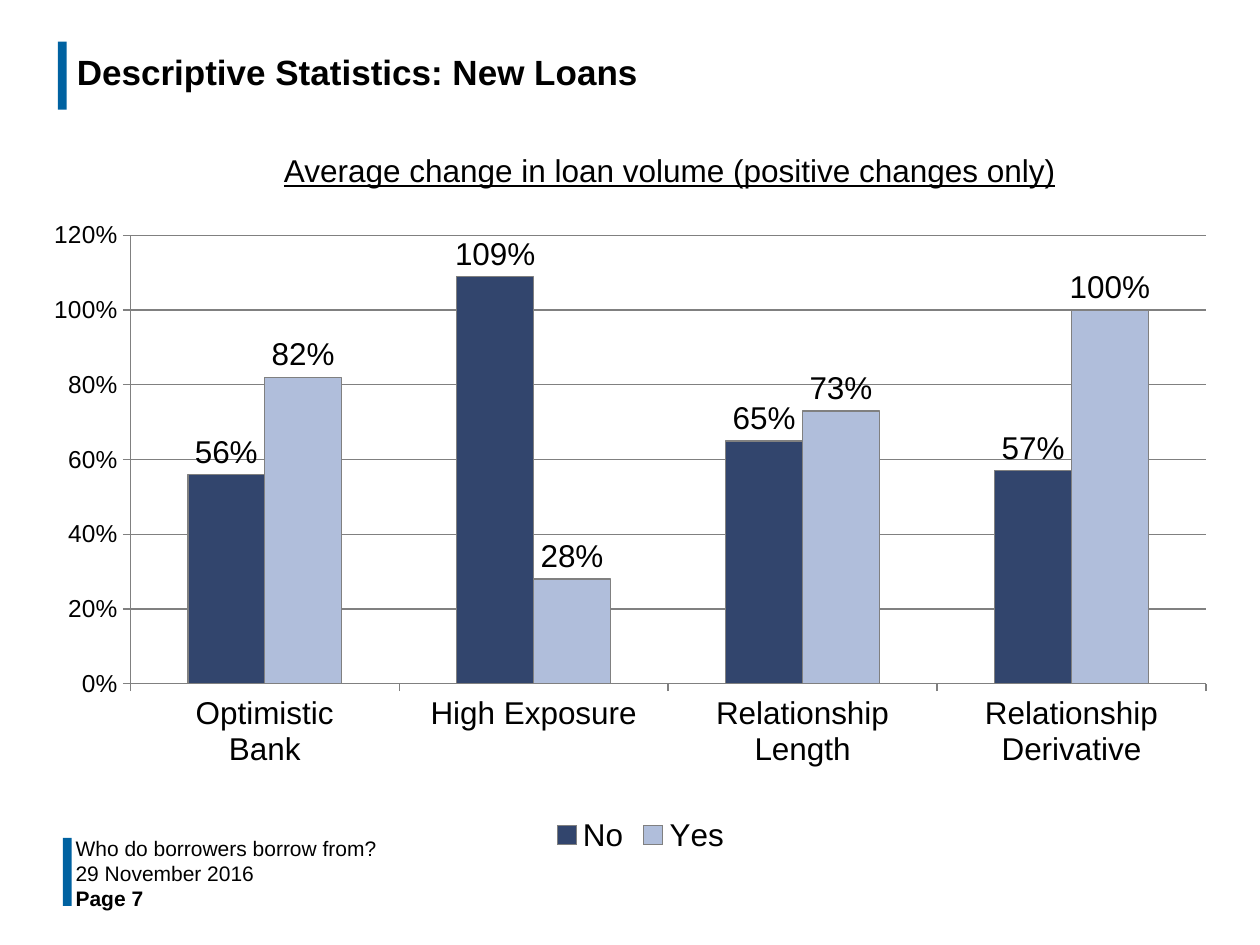
from lxml import etree
from pptx import Presentation
from pptx import util as u
from pptx.chart.data import CategoryChartData
from pptx.dml.color import RGBColor
from pptx.enum import chart as ch, shapes, text
from pptx.oxml import parse_xml
from pptx.oxml.ns import nsdecls, qn

THEME = {
    "font": "Arial", "ink": "000000", "bar": "0062A1", "line": "808080",
    "title": 20, "large": 18, "axis": 14, "small": 12,
}
TITLE = "Descriptive Statistics: New Loans"
HEAD = "Average change in loan volume (positive changes only)"
FOOT = [
    ("Who do borrowers borrow from?", 6.64, 8.88, False),
    ("29 November 2016", 6.84, 2.31, False),
    ("Page 7", 7.04, 2.31, True),
]
BARS = [(0.46, 0.33), (0.5, 6.65)]
CATS = ["Optimistic\nBank", "High Exposure", "Relationship\nLength", "Relationship\nDerivative"]
SERIES = [
    ("No", "32456D", (0.56, 1.09, 0.65, 0.57)),
    ("Yes", "B0BEDB", (0.82, 0.28, 0.73, 1)),
]
PLOT = {"x": 0.063, "y": 0.033, "w": 0.921, "h": 0.695}


def color(key):
    return RGBColor.from_string(THEME.get(key, key))


def box(*vals):
    return [u.Inches(v) for v in vals]


def style(font, size, bold=False):
    font.name = THEME["font"]
    font.size = u.Pt(THEME[size])
    font.bold = bold
    font.color.rgb = color("ink")


def stroke(line):
    line.color.rgb = color("line")
    line.width = u.Pt(0.75)


def write(slide, words, place, size, bold=False):
    frame = slide.shapes.add_textbox(*box(*place)).text_frame
    frame.word_wrap = True
    para = frame.paragraphs[0]
    para.text = words
    style(para.font, size, bold)
    return frame


def add_bars(slide):
    for left, top in BARS:
        bar = slide.shapes.add_shape(shapes.MSO_SHAPE.RECTANGLE, *box(left, top, 0.07, 0.54))
        bar.shadow.inherit = False
        bar.fill.solid()
        bar.fill.fore_color.rgb = color("bar")
        bar.line.fill.background()


def add_title(slide):
    title = slide.shapes.title
    title.left, title.top, title.width, title.height = box(0.51, 0.28, 9.29, 0.63)
    frame = title.text_frame
    frame.text = TITLE
    frame.vertical_anchor = text.MSO_ANCHOR.MIDDLE
    para = frame.paragraphs[0]
    para.alignment = text.PP_ALIGN.LEFT
    para.line_spacing = u.Pt(20.4)
    style(para.font, "title", True)


def add_foot(slide):
    for words, top, width, bold in FOOT:
        frame = write(slide, words, (0.51, top, width, 0.18), "small", bold)
        frame.vertical_anchor = text.MSO_ANCHOR.MIDDLE
        frame.margin_left = frame.margin_right = u.Inches(0.09)
        frame.margin_top = frame.margin_bottom = u.Inches(0.04)


def set_plot(chart):
    area = chart._chartSpace.chart.plotArea
    for old in area.findall(qn("c:layout")):
        area.remove(old)
    layout = parse_xml(f"<c:layout {nsdecls('c')}><c:manualLayout/></c:layout>")
    marks = [("layoutTarget", "inner"), ("xMode", "edge"), ("yMode", "edge"), *PLOT.items()]
    for tag, val in marks:
        etree.SubElement(layout[0], qn(f"c:{tag}")).set("val", str(val))
    area.insert(0, layout)


def add_chart(slide):
    data = CategoryChartData(number_format="0%")
    data.categories = CATS
    for name, _, vals in SERIES:
        data.add_series(name, vals)
    kind = ch.XL_CHART_TYPE.COLUMN_CLUSTERED
    chart = slide.shapes.add_chart(kind, *box(0.43, 1.7, 9.29, 5.12), data).chart
    style(chart.font, "axis")
    chart.has_title = False
    chart.has_legend = True
    chart.legend.position = ch.XL_LEGEND_POSITION.BOTTOM
    chart.legend.include_in_layout = False
    style(chart.legend.font, "large")

    cat, val = chart.category_axis, chart.value_axis
    for axis, size in ((cat, "large"), (val, "axis")):
        axis.major_tick_mark = ch.XL_TICK_MARK.OUTSIDE
        stroke(axis.format.line)
        style(axis.tick_labels.font, size)
    val.minimum_scale, val.maximum_scale, val.major_unit = 0, 1.2, 0.2
    val.tick_labels.number_format = "0%"
    val.tick_labels.number_format_is_linked = False
    stroke(val.major_gridlines.format.line)

    plot = chart.plots[0]
    plot.gap_width = 150
    plot.overlap = 0
    plot.vary_by_categories = False
    for row, (_, fill, _) in zip(plot.series, SERIES):
        row.format.fill.solid()
        row.format.fill.fore_color.rgb = color(fill)
        stroke(row.format.line)
        tags = row.data_labels
        tags.show_value = True
        tags.number_format = "0%"
        tags.number_format_is_linked = False
        tags.position = ch.XL_LABEL_POSITION.OUTSIDE_END
        style(tags.font, "large")
    set_plot(chart)


def main():
    deck = Presentation()
    deck.slide_width, deck.slide_height = box(10, 7.5)
    slide = deck.slides.add_slide(deck.slide_layouts[5])
    add_bars(slide)
    add_title(slide)
    add_foot(slide)
    add_chart(slide)
    para = write(slide, HEAD, (1.14, 1.15, 8.35, 0.4), "large").paragraphs[0]
    para.alignment = text.PP_ALIGN.CENTER
    para.font.underline = True
    deck.save("out.pptx")


if __name__ == "__main__":
    main()
